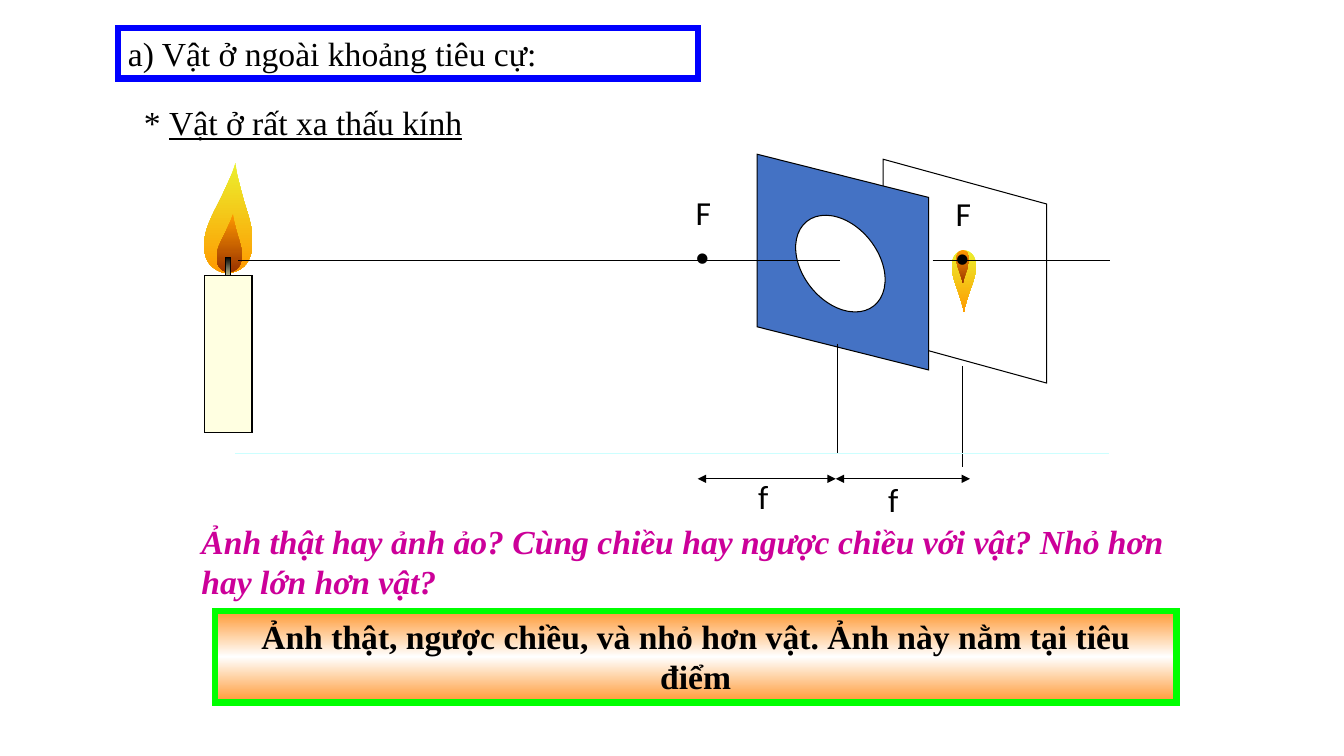
import math

from lxml import etree
from pptx import Presentation
from pptx import util as u
from pptx.dml.color import RGBColor
from pptx.enum import shapes, text
from pptx.oxml.ns import qn

PX = 9144  # EMU per px, 100 px to the inch
COLORS = {
    "black": "000000", "white": "FFFFFF", "lens": "4472C4", "ground": "CCFFFF",
    "wax": "FFFFE1", "wick": "FFFFCC", "yellow": "EBF02E", "orange": "FF9900",
    "brown": "993300", "peach": "FF9933", "green": "00FF00", "blue": "0000FF",
    "magenta": "CC0099",
}
RGB = {name: RGBColor.from_string(value) for name, value in COLORS.items()}

# Half outline of a flame: (share of length from the base, share of half width)
FLAME = [(0, 0), (.03, .46), (.1, .81), (.21, .98), (.35, .97), (.5, .78),
         (.66, .49), (.8, .26), (.91, .09), (.98, .02), (1, 0)]
OUTLINE = FLAME + [(along, -side) for along, side in FLAME[-2:0:-1]]

presentation = Presentation()
presentation.slide_width, presentation.slide_height = 1333 * PX, 750 * PX
slide = presentation.slides.add_slide(presentation.slide_layouts[6])


def style(shape, fill=None, line=None, width=0.75):
    """Set fill (none, one colour, or a vertical gradient) and outline."""
    shape.shadow.inherit = False
    if fill is None:
        shape.fill.background()
    elif isinstance(fill, str):
        shape.fill.solid()
        shape.fill.fore_color.rgb = RGB[fill]
    else:
        shape.fill.gradient()
        shape.fill.gradient_angle = 270
        stops = shape._element.spPr.find(".//" + qn("a:gsLst"))
        stops.clear()
        for index, name in enumerate(fill):
            position = str(100000 * index // (len(fill) - 1))
            stop = etree.SubElement(stops, qn("a:gs"), pos=position)
            etree.SubElement(stop, qn("a:srgbClr"), val=COLORS[name])
    if line is None:
        shape.line.fill.background()
    else:
        shape.line.color.rgb = RGB[line]
        shape.line.width = u.Pt(width)
        etree.SubElement(shape._element.spPr.find(qn("a:ln")), qn("a:miter"), lim="800000")


def write(shape, lines, font="Times New Roman", color="black"):
    """Fill a shape with paragraphs given as (content, size)."""
    frame = shape.text_frame
    frame.word_wrap = True
    frame.vertical_anchor = text.MSO_ANCHOR.TOP
    for index, (content, size) in enumerate(lines):
        paragraph = frame.add_paragraph() if index else frame.paragraphs[0]
        paragraph.text = content
        paragraph.alignment = text.PP_ALIGN.LEFT
        paragraph.space_before = u.Pt(8 if index else 0)
        paragraph.font.size = u.Pt(size)
        paragraph.font.name = font
        paragraph.font.color.rgb = RGB[color]
    return frame.paragraphs[0]


# Screen, lens holder, lens and the answer box
IO = shapes.MSO_SHAPE.FLOWCHART_DATA
RECTANGLE = shapes.MSO_SHAPE.RECTANGLE
drawn = {}
for name, kind, box, rotation, fill, line, width in [
    ("screen", IO, (846, 188, 222, 162), 90, "white", "black", 0.75),
    ("lens holder", IO, (729, 175, 214, 170), 270, "lens", "black", 0.75),
    ("lens", shapes.MSO_SHAPE.OVAL, (796, 208, 75, 107), 141.6, "white", "black", 0.75),
    ("answer", RECTANGLE, (213, 606, 954, 91), 0, ("peach", "white", "peach"), "green", 4.5),
    ("heading", RECTANGLE, (117, 28, 575, 50), 0, None, "blue", 4.5),
]:
    shape = slide.shapes.add_shape(kind, *(value * PX for value in box))
    shape.rotation = rotation
    style(shape, fill, line, width)
    drawn[name] = shape

# Flames of the candle and of its image, tilt in degrees from upright
for x, y, length, width, tilt, fill in [
    (224, 271, 110, 48, 5, ("yellow", "orange")),
    (226, 270, 58, 25, 5, ("orange", "brown")),
    (956, 248, 62, 24, 180, ("yellow", "orange")),
    (955, 248, 33, 13, 180, ("orange", "brown")),
]:
    cos, sin = math.cos(math.radians(tilt)), math.sin(math.radians(tilt))
    points = []
    for along, side in OUTLINE:
        along, side = along * length, side * width / 2
        points.append((round((x + along * sin + side * cos) * PX),
                       round((y - along * cos + side * sin) * PX)))
    builder = slide.shapes.build_freeform(*points[0], scale=1.0)
    builder.add_line_segments(points[1:] + points[:1], close=True)
    shape = builder.convert_to_shape()
    style(shape, fill)
    # Turn the straight segments into smooth curves
    left, top = min(p[0] for p in points), min(p[1] for p in points)
    for index, segment in enumerate(list(shape._element.iter(qn("a:lnTo")))):
        a, b, c, d = (points[(index + step) % len(points)] for step in (-1, 0, 1, 2))
        segment.tag = qn("a:cubicBezTo")
        controls = [[q + (r - p) / 6 for p, q, r in zip(a, b, c)],
                    [r - (s - q) / 6 for q, r, s in zip(b, c, d)]]
        for place, (cx, cy) in enumerate(controls):
            point = etree.Element(qn("a:pt"), x=str(round(cx - left)), y=str(round(cy - top)))
            segment.insert(place, point)

# Wick and candle body
for box, fill in [((224, 255, 5, 25), ("black", "wick")), ((203, 273, 47, 156), "wax")]:
    shape = slide.shapes.add_shape(RECTANGLE, *(value * PX for value in box))
    style(shape, fill, "black")

# Optical axis, guide lines, ground and focal length arrows
for x1, y1, x2, y2, color, arrows in [
    (1034, 258, 1101, 258, "black", False),
    (955, 363, 955, 463, "black", False),
    (831, 341, 831, 449, "black", False),
    (233, 450, 1100, 450, "ground", False),
    (833, 258, 236, 258, "black", False),
    (925, 258, 958, 258, "black", False),
    (956, 258, 1064, 258, "black", False),
    (829, 475, 962, 475, "black", True),
    (829, 475, 692, 475, "black", True),
]:
    connector = slide.shapes.add_connector(
        shapes.MSO_CONNECTOR.STRAIGHT, x1 * PX, y1 * PX, x2 * PX, y2 * PX)
    connector.line.color.rgb = RGB[color]
    connector.line.width = u.Pt(0.75)
    if arrows:
        for end in ("a:headEnd", "a:tailEnd"):
            etree.SubElement(connector._element.spPr.find(qn("a:ln")), qn(end), type="triangle")
    etree.SubElement(connector._element.spPr, qn("a:effectLst"))

# Focal point and focal length labels
for box, lines in [
    ((680, 185, 58, 90), [("F", 24), ("●", 16)]),
    ((938, 186, 58, 90), [("F", 24), ("●", 16)]),
    ((871, 470, 50, 50), [("f", 24)]),
    ((742, 467, 50, 50), [("f", 24)]),
]:
    write(slide.shapes.add_textbox(*(value * PX for value in box)), lines, "Calibri")

# Heading, case, question and answer
write(drawn["heading"], [("a) Vật ở ngoài khoảng tiêu cự:", 24)])

case = slide.shapes.add_textbox(133 * PX, 96 * PX, 533 * PX, 50 * PX)
paragraph = write(case, [("* ", 24)])
run = paragraph.add_run()
run.text = "Vật ở rất xa thấu kính"
run.font.underline = True

question = slide.shapes.add_textbox(190 * PX, 512 * PX, 978 * PX, 91 * PX)
paragraph = write(question, [(
    "Ảnh thật hay ảnh ảo? Cùng chiều hay ngược chiều với vật? Nhỏ hơn hay lớn hơn vật?", 24)],
    color="magenta")
paragraph.font.bold = paragraph.font.italic = True

paragraph = write(drawn["answer"], [(
    "Ảnh thật, ngược chiều, và nhỏ hơn vật. Ảnh này nằm tại tiêu điểm", 24)])
paragraph.font.bold = True
paragraph.alignment = text.PP_ALIGN.CENTER

presentation.save("out.pptx")
